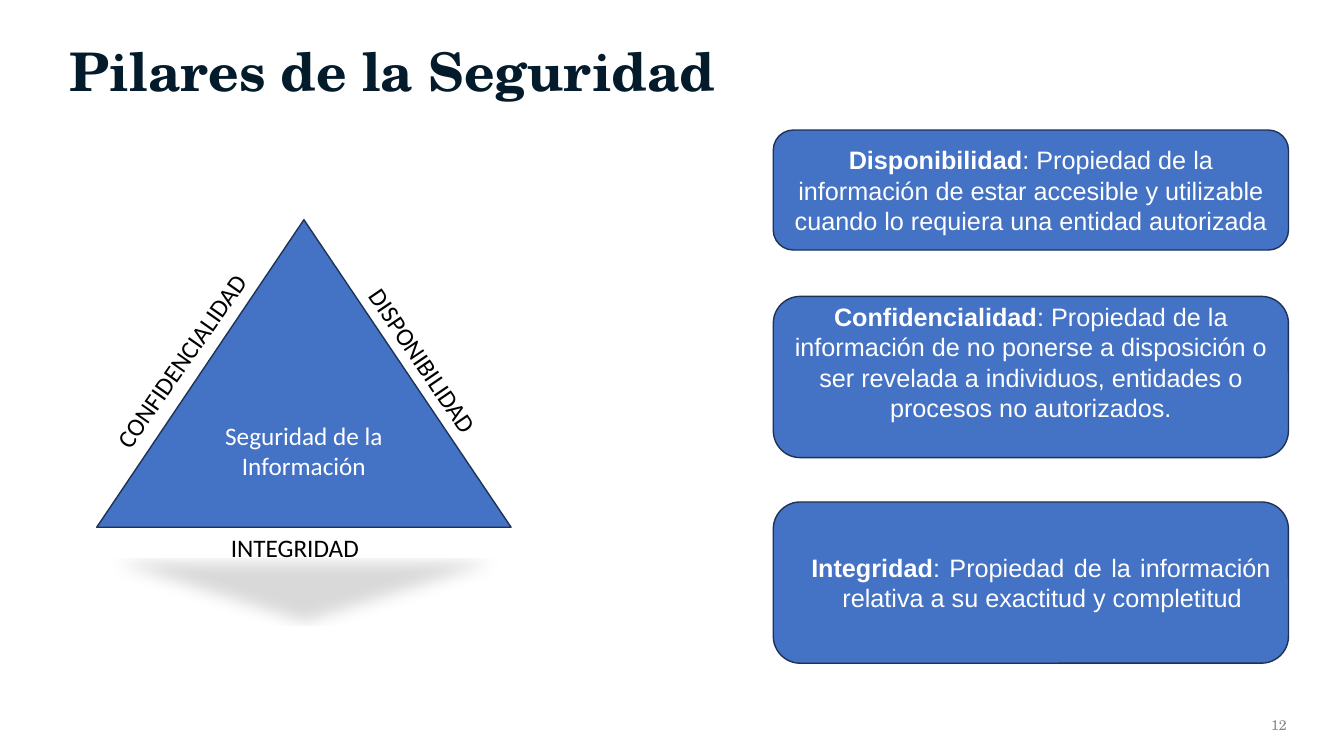
import pptx
import pptx.dml.color
import pptx.enum.shapes
import pptx.enum.text
import pptx.oxml
import pptx.oxml.ns
import pptx.util

RGBColor = pptx.dml.color.RGBColor
Shapes = pptx.enum.shapes.MSO_SHAPE
Align = pptx.enum.text.PP_ALIGN
Anchor = pptx.enum.text.MSO_ANCHOR
AutoSize = pptx.enum.text.MSO_AUTO_SIZE

BLUE = RGBColor(0x44, 0x72, 0xC4)
OUTLINE = RGBColor(0x1E, 0x32, 0x56)
NAVY = RGBColor(0x04, 0x1B, 0x2C)
GRAY = RGBColor(0x88, 0x88, 0x88)
WHITE = RGBColor(0xFF, 0xFF, 0xFF)
BLACK = RGBColor(0x00, 0x00, 0x00)

SERIF = "TeX Gyre Schola"
CARD_LEFT, CARD_WIDTH = 57.54, 38.33

CAST_SHADOW = (
    f'<a:effectLst {pptx.oxml.ns.nsdecls("a")}>'
    '<a:outerShdw blurRad="152400" dist="317500" dir="5400000" sx="90000" sy="-19000" rotWithShape="0">'
    '<a:srgbClr val="000000"><a:alpha val="15000"/></a:srgbClr>'
    '</a:outerShdw></a:effectLst>'
)


def add_text(para, text, *, size=18, font="Calibri", color=BLACK, bold=False):
    span = para.add_run()
    span.text = text
    span.font.size = pptx.util.Pt(size)
    span.font.name = font
    span.font.bold = bold
    span.font.color.rgb = color


class SlideBuilder:
    """Draws styled elements on one slide, placed in percent of its size."""

    def __init__(self, deck):
        self.deck = deck
        self.page = deck.slides.add_slide(deck.slide_layouts[6])

    def place(self, left, top, width, height):
        across, down = self.deck.slide_width / 100, self.deck.slide_height / 100
        return int(left * across), int(top * down), int(width * across), int(height * down)

    def text(self, area, text, align=Align.LEFT, spacing=1.0, **style):
        box = self.page.shapes.add_textbox(*self.place(*area))
        box.text_frame.word_wrap = True
        para = box.text_frame.paragraphs[0]
        para.alignment = align
        para.line_spacing = spacing
        add_text(para, text, **style)
        return box

    def side_label(self, area, text, rotation=0):
        box = self.text(area, text, align=Align.CENTER)
        box.text_frame.auto_size = AutoSize.SHAPE_TO_FIT_TEXT
        box.rotation = rotation

    def shape(self, kind, area):
        box = self.page.shapes.add_shape(kind, *self.place(*area))
        box.shadow.inherit = False
        box.fill.solid()
        box.fill.fore_color.rgb = BLUE
        box.line.color.rgb = OUTLINE
        box.line.width = pptx.util.Pt(1)
        box.text_frame.word_wrap = True
        box.text_frame.vertical_anchor = Anchor.MIDDLE
        box.text_frame.paragraphs[0].alignment = Align.CENTER
        return box

    def triangle(self, area, text):
        box = self.shape(Shapes.ISOSCELES_TRIANGLE, area)
        properties = box.fill._xPr
        plain = properties.find(pptx.oxml.ns.qn("a:effectLst"))
        properties.replace(plain, pptx.oxml.parse_xml(CAST_SHADOW))
        add_text(box.text_frame.paragraphs[0], text, color=WHITE)

    def card(self, top, height, term, meaning):
        box = self.shape(Shapes.ROUNDED_RECTANGLE, (CARD_LEFT, top, CARD_WIDTH, height))
        para = box.text_frame.paragraphs[0]
        add_text(para, term, font="Arial", color=WHITE, bold=True)
        add_text(para, ": " + meaning, font="Arial", color=WHITE)
        return box


def main():
    deck = pptx.Presentation()
    deck.slide_width = pptx.util.Inches(13.33)
    deck.slide_height = pptx.util.Inches(7.5)
    slide = SlideBuilder(deck)

    slide.text((4.43, 3.2, 75.17, 11.2), "Pilares de la Seguridad",
               spacing=1.15, size=38, font=SERIF, color=NAVY, bold=True)
    number = slide.text((90.47, 93.47, 6, 6.53), "12",
                        align=Align.RIGHT, size=10, font=SERIF, color=GRAY)
    number.text_frame.margin_top = pptx.util.Inches(0.1)

    slide.triangle((7.2, 29.07, 30.83, 40.67), "Seguridad de la Información")

    slide.card(17.2, 15.87, "Disponibilidad",
               "Propiedad de la información de estar accesible y utilizable "
               "cuando lo requiera una entidad autorizada")
    confidentiality = slide.card(
        39.2, 21.33, "Confidencialidad",
        "Propiedad de la información de no ponerse a disposición o ser revelada "
        "a individuos, entidades o procesos no autorizados.")
    confidentiality.text_frame.margin_bottom = pptx.util.Inches(0.35)
    integrity = slide.card(66.4, 21.33, "Integridad",
                           "Propiedad de la información relativa a su exactitud y completitud")
    para = integrity.text_frame.paragraphs[0]
    para.alignment = Align.JUSTIFY
    indents = para._p.get_or_add_pPr()
    indents.set("marL", str(pptx.util.Inches(0.51)))
    indents.set("indent", str(pptx.util.Inches(-0.31)))

    slide.side_label((1.2, 45.2, 24.16, 4.53), "CONFIDENCIALIDAD", rotation=305.1)
    slide.side_label((19.73, 45.2, 23.86, 4.53), "DISPONIBILIDAD", rotation=55.8)
    slide.side_label((6.53, 69.73, 30.83, 4.53), "INTEGRIDAD")

    deck.save("out.pptx")


if __name__ == "__main__":
    main()
